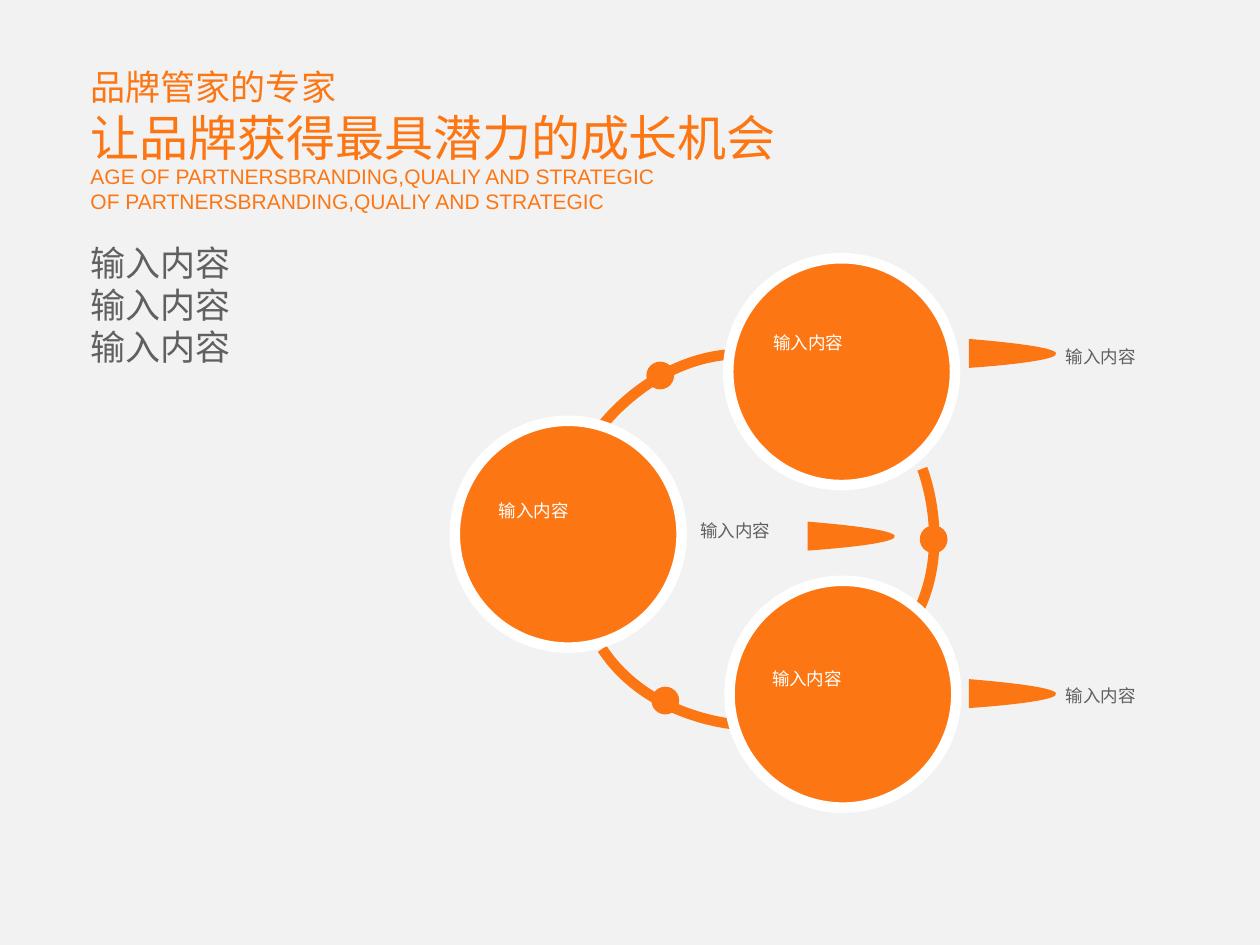
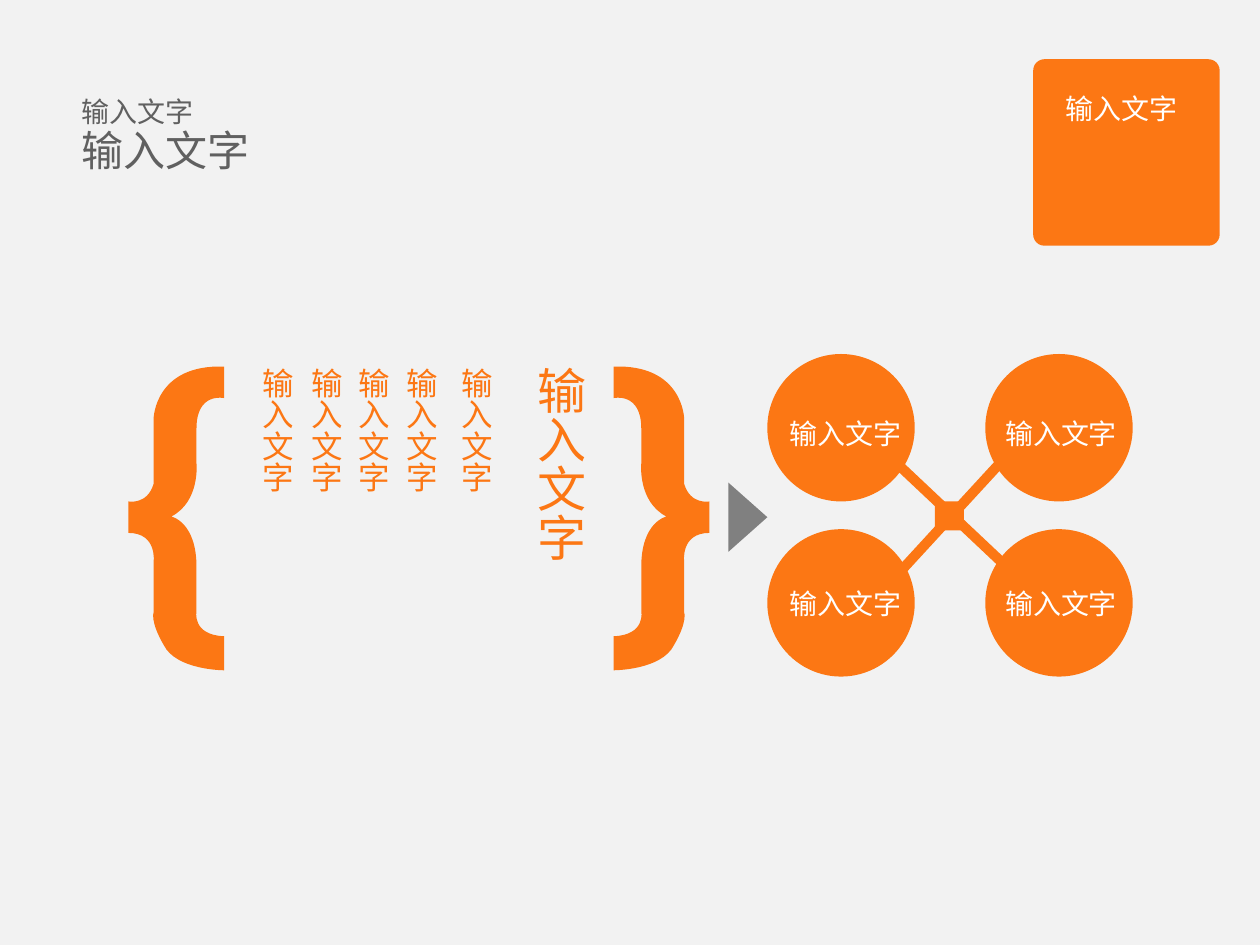
from pptx import Presentation
from pptx.dml.color import RGBColor
from pptx.enum.shapes import MSO_SHAPE
from pptx.enum.text import MSO_ANCHOR, MSO_AUTO_SIZE, PP_ALIGN
from pptx.oxml.ns import qn
from pptx.util import Inches, Pt
from lxml.etree import SubElement

# Shared look
ORANGE, GREY, WHITE = "FC7714", "606060", "FFFFFF"
PAPER, ARROW = "F2F2F2", "808080"
CJK, LATIN = "Noto Sans CJK SC", "Arial"
ITEM, WORD = "输入内容", "输入文字"


def tint(part, color):
    """Give a fill, or the fill of a line, a solid colour."""
    part.solid()
    part.fore_color.rgb = RGBColor.from_string(color)


def write(shape, lines, sizes, color=GREY, font=CJK, upright=False):
    """Set the lines of a shape; sizes holds one size per line."""
    frame = shape.text_frame
    frame.word_wrap = not upright
    frame.auto_size = MSO_AUTO_SIZE.NONE
    frame.vertical_anchor = MSO_ANCHOR.TOP
    if upright:
        frame._txBody.bodyPr.set("vert", "eaVert")
    for i, (line, size) in enumerate(zip(lines, sizes)):
        para = frame.add_paragraph() if i else frame.paragraphs[0]
        para.alignment = PP_ALIGN.LEFT
        para.space_before = para.space_after = Pt(0)
        if font == CJK:
            para.line_spacing = Pt(1.2 * size)
        props = para._p.get_or_add_pPr()
        props.set("marL", "0")
        props.set("indent", "0")
        SubElement(props, qn("a:buNone"))
        run = para.add_run()
        run.text = line
        run.font.size = Pt(size)
        run.font.name = font
        run.font.color.rgb = RGBColor.from_string(color)
        SubElement(run._r.get_or_add_rPr(), qn("a:ea")).set("typeface", font)


def label(slide, box, lines, sizes, **look):
    shape = slide.shapes.add_textbox(*map(Inches, box))
    write(shape, lines, sizes, **look)


def holder(shape, box, lines, sizes, **look):
    """Move and fill a placeholder."""
    shape.left, shape.top, shape.width, shape.height = map(Inches, box)
    write(shape, lines, sizes, **look)


def block(slide, kind, box, color=ORANGE, turn=0, rim=None):
    shape = slide.shapes.add_shape(kind, *map(Inches, box))
    shape.shadow.inherit = False
    shape.rotation = turn
    tint(shape.fill, color)
    if rim:
        tint(shape.line.fill, rim)
        shape.line.width = Pt(6)
    else:
        shape.line.fill.background()
    return shape


def spread(start, steps):
    """List each step's points; a bend of 4 numbers pulls at its end only."""
    last, groups = start, []
    for step in steps:
        dots = list(zip(step[::2], step[1::2]))
        if len(dots) == 2:
            dots.insert(0, last)
        groups.append(dots)
        last = dots[-1]
    return groups


def bend(shape, groups):
    """Turn the three legs of each bend into one Bezier curve."""
    legs = iter(list(shape._element.iter(qn("a:lnTo"))))
    for dots in groups:
        trio = [next(legs) for _ in dots]
        if len(trio) == 3:
            arc = SubElement(trio[0].getparent(), qn("a:cubicBezTo"))
            trio[0].addprevious(arc)
            for leg in trio:
                arc.append(leg[0])
                leg.getparent().remove(leg)


def curve(slide, left, top, start, steps, closed=True, flip=1):
    """Draw an outline from a corner; flip=-1 mirrors it sideways."""
    def spot(dot):
        return Inches(left + flip * dot[0]), Inches(top + dot[1])

    groups = spread(start, steps)
    pen = slide.shapes.build_freeform(*spot(start))
    pen.add_line_segments([spot(dot) for dots in groups for dot in dots],
                          close=closed)
    shape = pen.convert_to_shape()
    bend(shape, groups)
    shape.shadow.inherit = False
    if closed:
        tint(shape.fill, ORANGE)
        shape.line.fill.background()
    else:
        shape.fill.background()
        tint(shape.line.fill, ORANGE)
        shape.line.width = Pt(6)


# Slide 1: ring of three circles
def ring(slide, left, top):
    for x, y in ((3.69, 2.12), (1.52, 0.82), (1.56, 3.4)):
        block(slide, MSO_SHAPE.OVAL, (left + x, top + y, 0.22, 0.22))
    arcs = (((1.16, 1.34), (1.57, 0.78, 2.24, 0.76)),
            ((3.71, 1.67), (3.97, 2.32, 3.63, 2.89)),
            ((2.24, 3.7), (1.54, 3.66, 1.17, 3.1)))
    for start, step in arcs:
        curve(slide, left, top, start, [step], closed=False)
    discs = ((2.17, 0, 0.26, 0.54), (0, 1.29, 0.25, 0.58),
             (2.18, 2.56, 0.24, 0.64))
    for x, y, dx, dy in discs:
        x, y = left + x, top + y
        block(slide, MSO_SHAPE.OVAL, (x, y, 1.8, 1.8), rim=WHITE)
        label(slide, (x + dx, y + dy, 1.3, 0.27), [ITEM], [10], color=WHITE)


def notes(slide, left, top):
    """Pointers and the captions next to them."""
    for x, y in ((2.9, 0.01), (0, 1.39), (2.9, 2.7)):
        label(slide, (left + x, top + y, 1.3, 0.27), [ITEM], [10])
    for x, y in ((0.95, 1.45), (2.23, 0), (2.23, 2.7)):
        curve(slide, left + x, top + y, (0, 0),
              [(0, 0.23), (1.56, 0.13, 0, 0)])


def growth(deck):
    slide = deck.slides.add_slide(deck.slide_layouts[1])
    head, body = slide.placeholders
    holder(head, (0.62, 0.47, 6.95, 0.91),
           ["品牌管家的专家", "让品牌获得最具潜力的成长机会"], [20, 28],
           color=ORANGE)
    label(slide, (0.62, 1.25, 6.33, 0.5),
          ["AGE OF PARTNERSBRANDING,QUALIY AND STRATEGIC",
           "OF PARTNERSBRANDING,QUALIY AND STRATEGIC"], [12, 12],
          color=ORANGE, font=LATIN)
    holder(body, (0.62, 1.87, 2.73, 1.58), [ITEM] * 3, [20] * 3)
    ring(slide, 3.61, 2.05)
    notes(slide, 5.46, 2.69)


# Slide 2: braces lead to four linked circles
BRACE = [(0.76, 0.27), (0.54, 0.22, 0.54, 0.51), (0.54, 0.79),
         (0.57, 1.09, 0.34, 1.21), (0.54, 1.25, 0.54, 1.61), (0.54, 1.96),
         (0.5, 2.15, 0.76, 2.16), (0.76, 2.43), (0.38, 2.43, 0.28, 2.23),
         (0.17, 2.04, 0.2, 1.97, 0.2, 1.97), (0.2, 1.57),
         (0.23, 1.34, 0, 1.34), (0, 1.09), (0.15, 1.12, 0.2, 0.95),
         (0.2, 0.43), (0.21, 0, 0.76, 0.02)]


def braces(slide, left, top, width):
    curve(slide, left, top, (0.76, 0.02), BRACE)
    curve(slide, left + width, top, (0.76, 0.02), BRACE, flip=-1)
    for x in (0.88, 1.27, 1.64, 2.02, 2.46):
        label(slide, (left + x, top - 0.07, 0.5, 1.11), [WORD], [18],
              color=ORANGE, upright=True)
    label(slide, (left + 3.04, top - 0.08, 0.67, 1.67), [WORD], [28],
          color=ORANGE, upright=True)


def links(slide, left, top):
    for x, dx in ((0, 0.08), (1.73, 0.06)):
        for y, dy in ((0, 0.45), (1.39, 0.41)):
            block(slide, MSO_SHAPE.OVAL, (left + x, top + y, 1.17, 1.17))
            label(slide, (left + x + dx, top + y + dy, 1.33, 0.37),
                  [WORD], [16], color=WHITE)
    for x, turn in ((0.83, 43.3), (0.85, 132.6)):
        block(slide, MSO_SHAPE.RECTANGLE,
              (left + x, top + 1.23, 1.25, 0.08), turn=turn)
    block(slide, MSO_SHAPE.RECTANGLE, (left + 1.33, top + 1.17, 0.23, 0.23))


def badge(slide, left, top):
    tile = block(slide, MSO_SHAPE.ROUNDED_RECTANGLE, (left, top, 1.48, 1.48))
    tile.adjustments[0] = 0.06
    label(slide, (left + 0.16, top + 0.21, 1.41, 0.37), [WORD], [16],
          color=WHITE)


def flow(deck):
    slide = deck.slides.add_slide(deck.slide_layouts[5])
    badge(slide, 8.2, 0.47)
    label(slide, (0.55, 0.7, 3.67, 0.37), [WORD], [16])
    holder(slide.shapes.title, (0.55, 0.94, 3.67, 0.5), [WORD], [24])
    braces(slide, 1.02, 2.89, 4.61)
    block(slide, MSO_SHAPE.ISOSCELES_TRIANGLE, (5.66, 3.95, 0.55, 0.31),
          color=ARROW, turn=90)
    links(slide, 6.09, 2.81)


def main():
    deck = Presentation()
    deck.slide_width, deck.slide_height = Inches(10), Inches(7.5)
    tint(deck.slide_master.background.fill, PAPER)
    growth(deck)
    flow(deck)
    deck.save("out.pptx")


if __name__ == "__main__":
    main()
